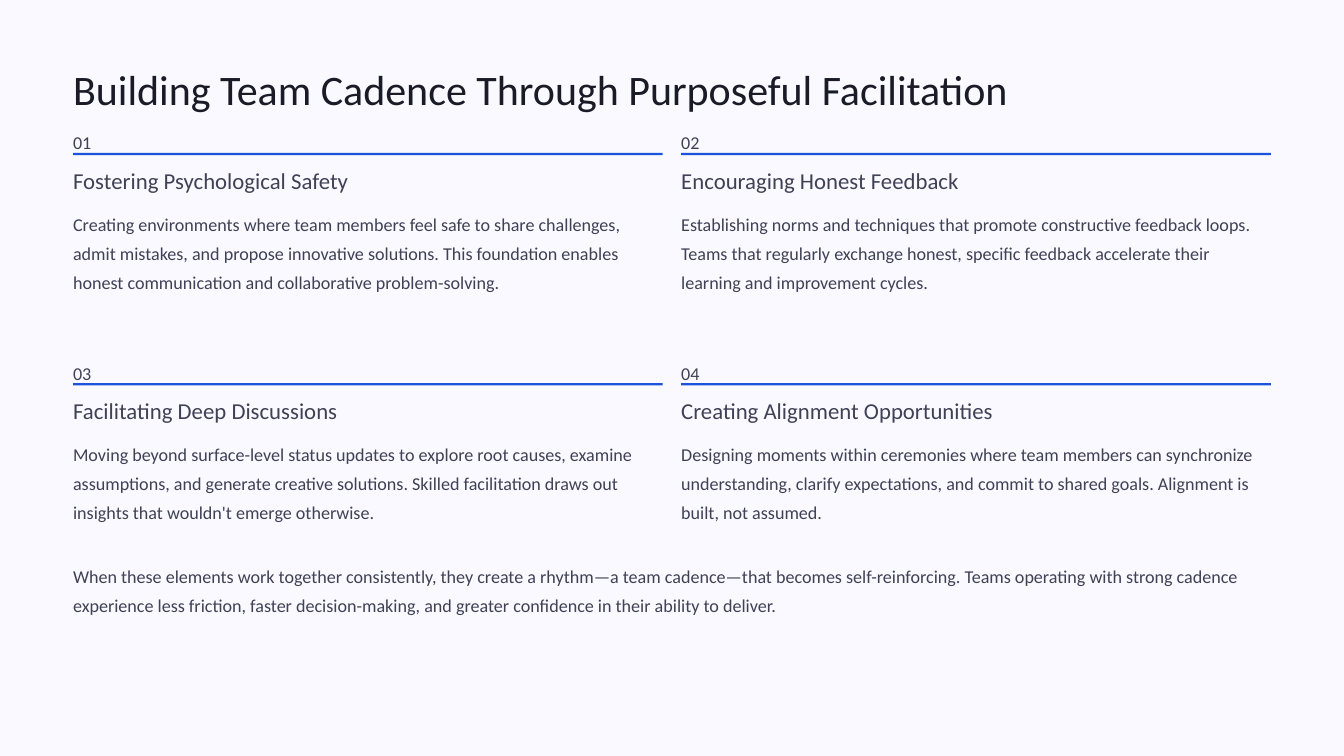
import dataclasses

import pptx
import pptx.dml.color
import pptx.enum.shapes
import pptx.enum.text
import pptx.slide
import pptx.util

Pt = pptx.util.Pt

COLORS = {"back": "F9F9FF", "title": "1B1B27", "text": "404155", "rule": "1B54DA"}
FONT = "Calibri"

# Page and grid, in points
LEFT, WIDTH = 62.64, 1026.72
TOP = 106.56
COL_STEP, ROW_STEP = 521.28, 197.28
CARD_WIDTH = 505.44


@dataclasses.dataclass
class Card:
    head: str
    body: str
    head_width: float
    body_height: float = 74.88


CARDS = [
    Card("Fostering Psychological Safety",
         "Creating environments where team members feel safe to share challenges, "
         "admit mistakes, and propose innovative solutions. This foundation enables "
         "honest communication and collaborative problem-solving.", 293.76, 100.08),
    Card("Encouraging Honest Feedback",
         "Establishing norms and techniques that promote constructive feedback loops. "
         "Teams that regularly exchange honest, specific feedback accelerate their "
         "learning and improvement cycles.", 298.08),
    Card("Facilitating Deep Discussions",
         "Moving beyond surface-level status updates to explore root causes, examine "
         "assumptions, and generate creative solutions. Skilled facilitation draws out "
         "insights that wouldn't emerge otherwise.", 282.96),
    Card("Creating Alignment Opportunities",
         "Designing moments within ceremonies where team members can synchronize "
         "understanding, clarify expectations, and commit to shared goals. Alignment is "
         "built, not assumed.", 333.36),
]

CLOSING = (
    "When these elements work together consistently, they create a rhythm—a team "
    "cadence—that becomes self-reinforcing. Teams operating with strong cadence "
    "experience less friction, faster decision-making, and greater confidence in "
    "their ability to deliver."
)


def tint(name: str) -> pptx.dml.color.RGBColor:
    return pptx.dml.color.RGBColor.from_string(COLORS[name])


def add_text(slide: pptx.slide.Slide, text: str, *, x: float, y: float,
             width: float, height: float, size: float = 15.5,
             line: float = 25, color: str = "text", wrap: bool = True) -> None:
    box = slide.shapes.add_textbox(Pt(x), Pt(y), Pt(width), Pt(height))
    frame = box.text_frame
    frame.margin_left = frame.margin_right = 0
    frame.margin_top = frame.margin_bottom = 0
    frame.word_wrap = wrap
    frame.vertical_anchor = pptx.enum.text.MSO_ANCHOR.TOP
    para = frame.paragraphs[0]
    para.line_spacing = Pt(line)
    run = para.add_run()
    run.text = text
    run.font.name = FONT
    run.font.size = Pt(size)
    run.font.color.rgb = tint(color)


def add_rule(slide: pptx.slide.Slide, x: float, y: float) -> None:
    rule = slide.shapes.add_shape(pptx.enum.shapes.MSO_SHAPE.RECTANGLE,
                                  Pt(x), Pt(y), Pt(CARD_WIDTH), Pt(2))
    rule.shadow.inherit = False
    rule.fill.solid()
    rule.fill.fore_color.rgb = tint("rule")
    rule.line.fill.background()


def add_card(slide: pptx.slide.Slide, card: Card, index: int) -> None:
    row, col = divmod(index, 2)
    x = LEFT + col * COL_STEP
    y = TOP + row * ROW_STEP
    add_text(slide, f"{index + 1:02}", x=x, y=y, width=15.84, height=19.44, wrap=False)
    add_rule(slide, x, y + 24.48)
    add_text(slide, card.head, x=x, y=y + 36, width=card.head_width, height=24.48,
             size=19.5, line=24, wrap=False)
    add_text(slide, card.body, x=x, y=y + 69.84, width=CARD_WIDTH,
             height=card.body_height)


def main() -> None:
    deck = pptx.Presentation()
    deck.slide_width, deck.slide_height = Pt(1152), Pt(648)
    slide = deck.slides.add_slide(deck.slide_layouts[6])

    # Background
    fill = slide.background.fill
    fill.solid()
    fill.fore_color.rgb = tint("back")

    # Title
    add_text(slide, "Building Team Cadence Through Purposeful Facilitation",
             x=LEFT, y=48.96, width=WIDTH, height=97.92,
             size=36, line=48.5, color="title")

    # Cards
    for index, card in enumerate(CARDS):
        add_card(slide, card, index)

    # Closing text
    add_text(slide, CLOSING, x=LEFT, y=478.08, width=WIDTH, height=49.68)

    deck.save("out.pptx")


if __name__ == "__main__":
    main()
